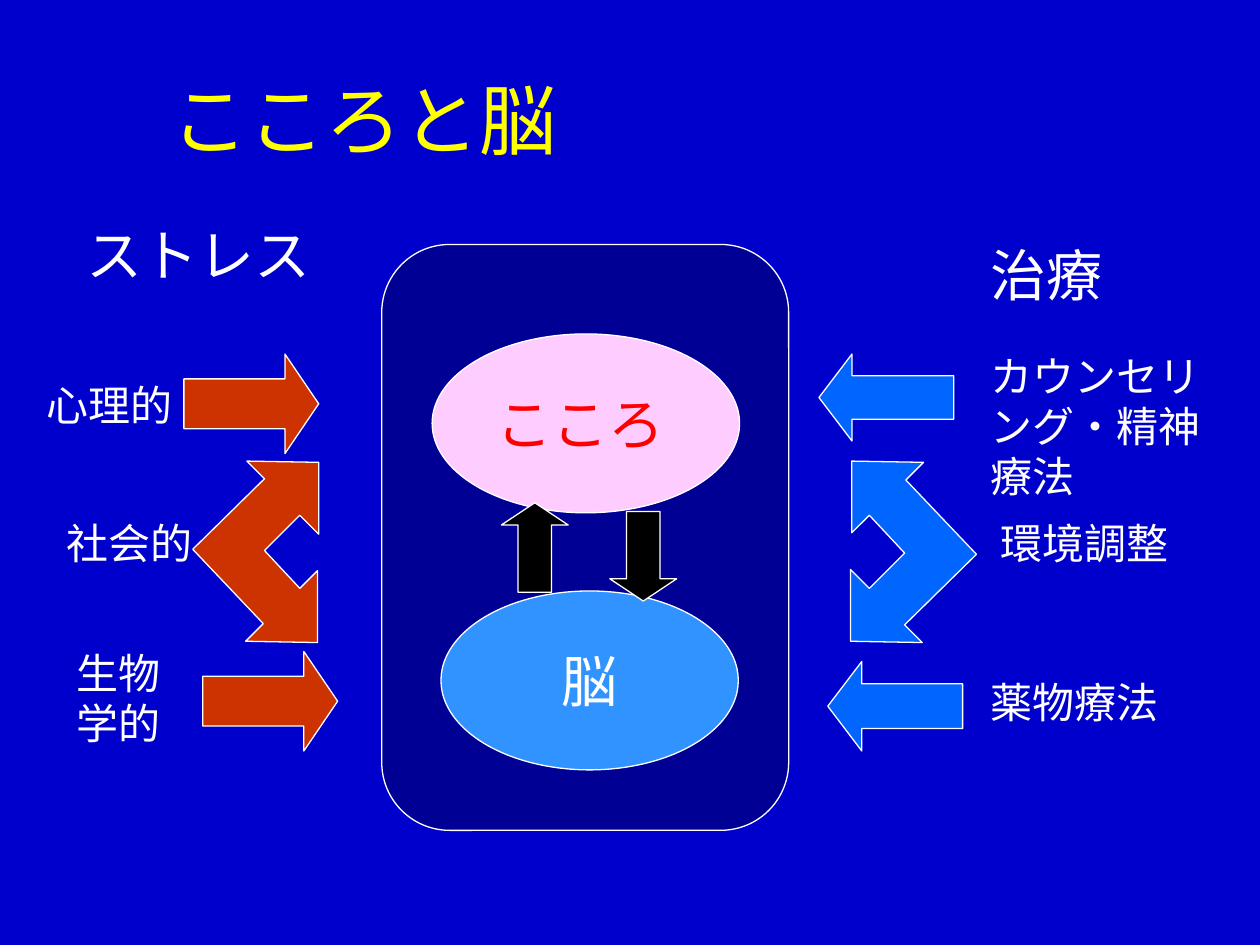
from pptx import Presentation
from pptx.dml.color import RGBColor
from pptx.enum.shapes import MSO_SHAPE
from pptx.enum.text import MSO_ANCHOR, PP_ALIGN
from pptx.util import Inches, Pt

BLUE = RGBColor(0x00, 0x00, 0xCC)
NAVY = RGBColor(0x00, 0x00, 0x94)
YELLOW = RGBColor(0xFF, 0xFF, 0x00)
WHITE = RGBColor(0xFF, 0xFF, 0xFF)
BLACK = RGBColor(0x00, 0x00, 0x00)
RED = RGBColor(0xFF, 0x00, 0x00)
PINK = RGBColor(0xFF, 0xCC, 0xFF)
SKY = RGBColor(0x31, 0x93, 0xFF)
STRESS = RGBColor(0xCC, 0x33, 0x00)
THERAPY = RGBColor(0x00, 0x66, 0xFF)

THERAPY_FORK = [
    (6.76, 3.66), (6.76, 4.23), (6.9, 4.09), (7.18, 4.39), (6.9, 4.67), (6.75, 4.52),
    (6.75, 5.09), (7.32, 5.1), (7.18, 4.96), (7.75, 4.4), (7.19, 3.81), (7.33, 3.67),
]
STRESS_FORK = [(9.28 - x, 8.76 - y) for x, y in THERAPY_FORK]


class Painter:
    """Holds the style and the current slide, and draws each kind of element."""

    font = "Karla"
    outline = Pt(0.75)

    def __init__(self, page):
        self.page = page
        page.background.fill.solid()
        page.background.fill.fore_color.rgb = BLUE

    def paint(self, shape, color):
        shape.shadow.inherit = False
        shape.fill.solid()
        shape.fill.fore_color.rgb = color
        shape.line.color.rgb = WHITE
        shape.line.width = self.outline
        return shape

    def shape(self, kind, place, color, adjustments=(), rotation=0):
        box = self.page.shapes.add_shape(kind, *map(Inches, place))
        for index, value in enumerate(adjustments):
            box.adjustments[index] = value
        box.rotation = rotation
        return self.paint(box, color)

    def outline_shape(self, points, color):
        corners = [(Inches(x), Inches(y)) for x, y in points]
        builder = self.page.shapes.build_freeform(*corners[0])
        builder.add_line_segments(corners[1:], close=True)
        return self.paint(builder.convert_to_shape(), color)

    def label(self, box, text, size, color, align=PP_ALIGN.LEFT, anchor=MSO_ANCHOR.TOP, wrap=True):
        frame = box.text_frame
        frame.word_wrap = wrap
        frame.vertical_anchor = anchor
        para = frame.paragraphs[0]
        para.alignment = align
        span = para.add_run()
        span.text = text
        span.font.color.rgb = color
        for name, value in {"name": self.font, "size": Pt(size)}.items():
            setattr(span.font, name, value)

    def text(self, place, text, size, color=WHITE, **layout):
        box = self.page.shapes.add_textbox(*map(Inches, place))
        self.label(box, text, size, color, **layout)


def main():
    deck = Presentation()
    deck.slide_width, deck.slide_height = Inches(10), Inches(7.5)
    painter = Painter(deck.slides.add_slide(deck.slide_layouts[6]))

    painter.shape(MSO_SHAPE.ROUNDED_RECTANGLE, (3.03, 1.94, 3.23, 4.65), NAVY, (0.167,))
    painter.text((1.26, 0.52, 8.52, 0.84), "こころと脳", 44, YELLOW, anchor=MSO_ANCHOR.BOTTOM)
    painter.shape(MSO_SHAPE.OVAL, (3.43, 2.65, 2.44, 1.42), PINK)
    brain = painter.shape(MSO_SHAPE.OVAL, (3.5, 4.69, 2.36, 1.42), SKY)
    painter.label(brain, "脳", 32, WHITE, PP_ALIGN.CENTER, MSO_ANCHOR.MIDDLE, False)

    for left, top in ((1.46, 2.81), (1.61, 5.17)):
        painter.shape(MSO_SHAPE.RIGHT_ARROW, (left, top, 1.07, 0.79), STRESS, (0.5, 0.339))
    for left, top, height in ((6.5, 2.81, 0.69), (6.57, 5.25, 0.71)):
        painter.shape(MSO_SHAPE.LEFT_ARROW, (left, top, 1.07, height), THERAPY, (0.5, 0.38))
    painter.outline_shape(THERAPY_FORK, THERAPY)
    painter.outline_shape(STRESS_FORK, STRESS)
    for left, top, rotation in ((3.98, 3.99, 0), (4.84, 4.06, 180)):
        painter.shape(MSO_SHAPE.UP_ARROW, (left, top, 0.53, 0.71), BLACK, (0.5, 0.333), rotation)

    painter.text((3.74, 3.04, 1.73, 0.63), "こころ", 32, RED, align=PP_ALIGN.CENTER)
    for place, text, size in (
        ((0.59, 1.7, 2.05, 0.63), "ストレス", 32),
        ((7.76, 1.86, 1.81, 0.63), "治療", 32),
        ((0.27, 2.96, 1.42, 0.5), "心理的", 24),
        ((0.43, 4.06, 1.42, 0.5), "社会的", 24),
        ((0.51, 5.09, 1.1, 0.9), "生物学的", 24),
        ((7.76, 2.73, 2.05, 0.9), "カウンセリング・精神療法", 24),
        ((7.84, 4.06, 1.73, 0.5), "環境調整", 24),
        ((7.76, 5.32, 1.81, 0.5), "薬物療法", 24),
    ):
        painter.text(place, text, size)

    deck.save("out.pptx")


if __name__ == "__main__":
    main()
